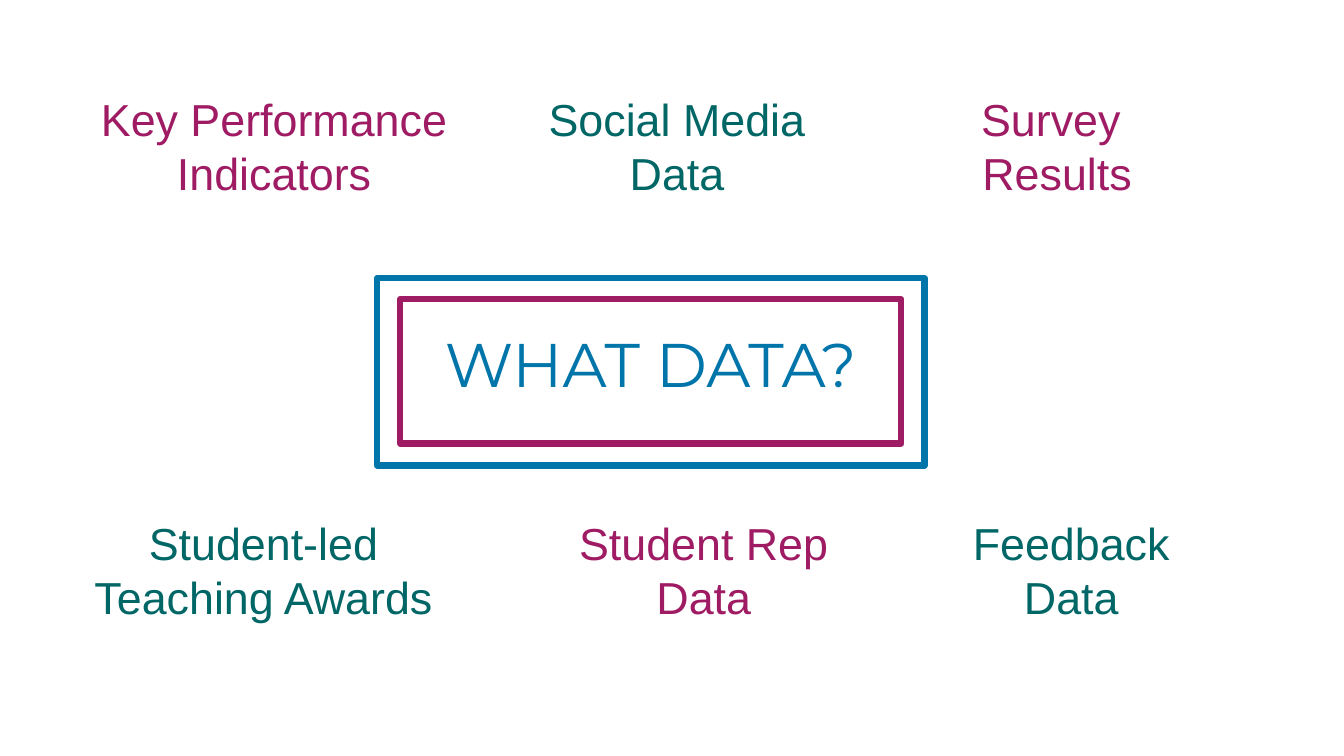
import pptx
import pptx.util
import pptx.dml.color
import pptx.enum.shapes
import pptx.enum.text

Inches = pptx.util.Inches
PLUM, BLUE, TEAL = "9F1C64", "0075AA", "006666"
TOP, LOW = 0.86, 5.07
TOPICS = [
    (0.87, TOP, 3.7, PLUM, ["Key Performance Indicators"]),
    (5.34, TOP, 2.75, TEAL, ["Social Media Data"]),
    (9.46, TOP, 2.05, PLUM, ["Survey ", "Results"]),
    (0.8, LOW, 3.63, TEAL, ["Student-led Teaching Awards"]),
    (5.62, LOW, 2.72, PLUM, ["Student Rep Data"]),
    (9.53, LOW, 2.19, TEAL, ["Feedback Data"]),
]


def tint(code):
    """Turn a hex string into a colour."""
    return pptx.dml.color.RGBColor.from_string(code)


def style(shape, lines, face, size, code):
    """Fill a text shape with centred lines in one format."""
    frame = shape.text_frame
    frame.text = "\n".join(lines)
    setup = {
        "word_wrap": True,
        "auto_size": pptx.enum.text.MSO_AUTO_SIZE.SHAPE_TO_FIT_TEXT,
        "vertical_anchor": pptx.enum.text.MSO_ANCHOR.TOP,
    }
    for key, value in setup.items():
        setattr(frame, key, value)
    for para in frame.paragraphs:
        para.alignment = pptx.enum.text.PP_ALIGN.CENTER
        for run in para.runs:
            for key, value in {"name": face, "size": pptx.util.Pt(size)}.items():
                setattr(run.font, key, value)
            run.font.color.rgb = tint(code)


def border(slide, box, code):
    """Draw an unfilled frame around a box."""
    rect = slide.shapes.add_shape(
        pptx.enum.shapes.MSO_SHAPE.RECTANGLE, *map(Inches, box))
    rect.shadow.inherit = False
    rect.fill.background()
    rect.line.color.rgb = tint(code)
    rect.line.width = pptx.util.Pt(4.5)


def centre(slide, box):
    """Place the title and its two nested frames in a box."""
    left, top, width, height = box
    pad = 0.23
    title = slide.shapes.title
    place = {"left": left + pad, "top": top + 0.42,
             "width": width - 2 * pad, "height": 0.84}
    for key, value in place.items():
        setattr(title, key, Inches(value))
    style(title, ["WHAT DATA?"], "Montserrat", 44, BLUE)
    inner = (left + pad, top + 0.21, width - 2 * pad, height - 0.43)
    border(slide, inner, PLUM)
    border(slide, box, BLUE)


def topic(slide, box, code, lines):
    """Write one kind of data in a box."""
    label = slide.shapes.add_textbox(*map(Inches, box))
    style(label, lines, "Arial", 32, code)


def main():
    """Build and save the slide."""
    deck = pptx.Presentation()
    deck.slide_width, deck.slide_height = Inches(13.33), Inches(7.5)
    slide = deck.slides.add_slide(deck.slide_layouts.get_by_name("Title Only"))
    centre(slide, (3.74, 2.76, 5.43, 1.86))
    for left, top, width, code, lines in TOPICS:
        topic(slide, (left, top, width, 1.18), code, lines)
    deck.save("out.pptx")


if __name__ == "__main__":
    main()
